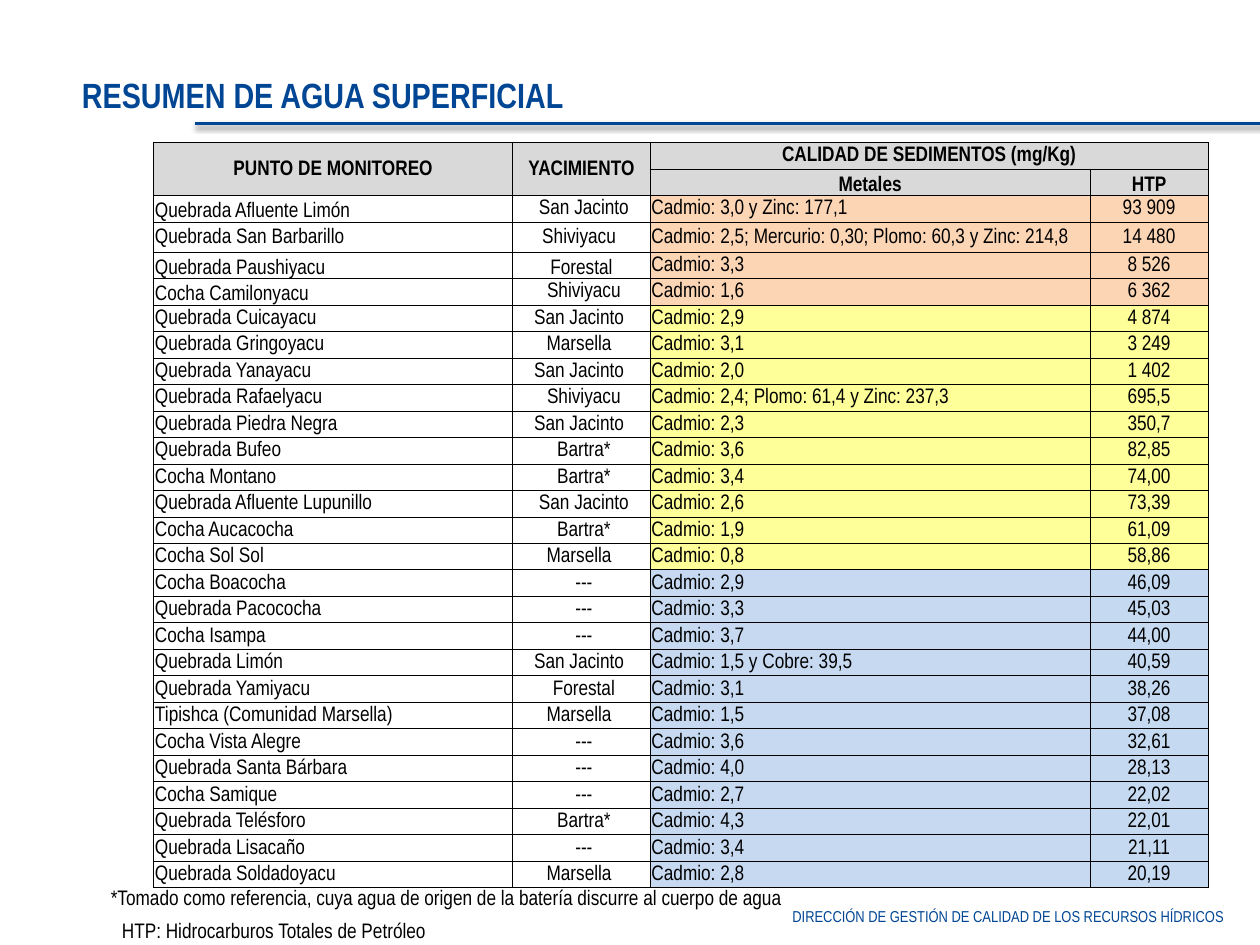
from dataclasses import dataclass

import pptx
import pptx.dml.color
import pptx.enum.shapes
import pptx.enum.text
import pptx.oxml
import pptx.oxml.ns
import pptx.util

Pt = pptx.util.Pt
ALIGN = pptx.enum.text.PP_ALIGN
ANCHOR = pptx.enum.text.MSO_ANCHOR
FIT = pptx.enum.text.MSO_AUTO_SIZE
NS = pptx.oxml.ns.nsdecls("a")


@dataclass(frozen=True)
class Theme:
    font: str = "Arial Narrow"
    blue: str = "004694"
    black: str = "000000"
    header: str = "D9D9D9"
    title_size: float = 20
    body_size: float = 12
    footer_size: float = 9


@dataclass(frozen=True)
class Label:
    text: str
    left: float
    top: float
    width: float
    height: float
    size: float
    color: str
    align: ALIGN = ALIGN.LEFT
    bold: bool = False
    wrap: bool = True


@dataclass(frozen=True)
class Sample:
    point: str
    field: str
    metals: str
    htp: str
    point_anchor: ANCHOR = ANCHOR.MIDDLE
    field_anchor: ANCHOR = ANCHOR.MIDDLE


@dataclass(frozen=True)
class Band:
    metals_fill: str
    htp_fill: str
    samples: tuple[Sample, ...]


T = Theme()

TITLE = Label("RESUMEN DE AGUA SUPERFICIAL", 39.6, 38.2, 621.4, 31.7,
              T.title_size, T.blue, bold=True)
LABELS = (
    Label("DIRECCIÓN DE GESTIÓN DE CALIDAD DE LOS RECURSOS HÍDRICOS",
          372.2, 514.8, 334.1, 18, T.footer_size, T.blue, ALIGN.RIGHT),
    Label("*Tomado como referencia, cuya agua de origen de la batería discurre al cuerpo de agua",
          56.2, 501.8, 402.5, 21.6, T.body_size, T.black, wrap=False),
    Label("HTP: Hidrocarburos Totales de Petróleo",
          62.6, 520.6, 342.7, 21.6, T.body_size, T.black),
)

BANDS = (
    Band("FCD5B5", "FCD5B4", (
        Sample("Quebrada Afluente Limón", " San Jacinto", "Cadmio: 3,0 y Zinc: 177,1", "93 909",
               ANCHOR.BOTTOM),
        Sample("Quebrada San Barbarillo", "Shiviyacu ",
               "Cadmio: 2,5; Mercurio: 0,30; Plomo: 60,3 y Zinc: 214,8", "14 480"),
        Sample("Quebrada Paushiyacu", "Forestal", "Cadmio: 3,3", "8 526",
               ANCHOR.BOTTOM, ANCHOR.BOTTOM),
        Sample("Cocha Camilonyacu", " Shiviyacu", "Cadmio: 1,6", "6 362", ANCHOR.BOTTOM),
    )),
    Band("FFFF99", "FFFF99", (
        Sample("Quebrada Cuicayacu", "San Jacinto ", "Cadmio: 2,9", "4 874"),
        Sample("Quebrada Gringoyacu", "Marsella ", "Cadmio: 3,1", "3 249"),
        Sample("Quebrada Yanayacu", "San Jacinto ", "Cadmio: 2,0", "1 402"),
        Sample("Quebrada Rafaelyacu", " Shiviyacu", "Cadmio: 2,4; Plomo: 61,4 y Zinc: 237,3", "695,5"),
        Sample("Quebrada Piedra Negra", "San Jacinto ", "Cadmio: 2,3", "350,7"),
        Sample("Quebrada Bufeo", " Bartra*", "Cadmio: 3,6", "82,85"),
        Sample("Cocha Montano", " Bartra*", "Cadmio: 3,4", "74,00"),
        Sample("Quebrada Afluente Lupunillo", " San Jacinto", "Cadmio: 2,6", "73,39"),
        Sample("Cocha Aucacocha", " Bartra*", "Cadmio: 1,9", "61,09"),
        Sample("Cocha Sol Sol", "Marsella ", "Cadmio: 0,8", "58,86"),
    )),
    Band("C6D9F1", "C5D9F1", (
        Sample("Cocha Boacocha", " ---", "Cadmio: 2,9", "46,09"),
        Sample("Quebrada Pacococha", " ---", "Cadmio: 3,3", "45,03"),
        Sample("Cocha Isampa", " ---", "Cadmio: 3,7", "44,00"),
        Sample("Quebrada Limón", "San Jacinto ", "Cadmio: 1,5 y Cobre: 39,5", "40,59"),
        Sample("Quebrada Yamiyacu", " Forestal", "Cadmio: 3,1", "38,26"),
        Sample("Tipishca (Comunidad Marsella)", "Marsella ", "Cadmio: 1,5", "37,08"),
        Sample("Cocha Vista Alegre", " ---", "Cadmio: 3,6", "32,61"),
        Sample("Quebrada Santa Bárbara", " ---", "Cadmio: 4,0", "28,13"),
        Sample("Cocha Samique", " ---", "Cadmio: 2,7", "22,02"),
        Sample("Quebrada Telésforo", " Bartra*", "Cadmio: 4,3", "22,01"),
        Sample("Quebrada Lisacaño", " ---", "Cadmio: 3,4", "21,11"),
        Sample("Quebrada Soldadoyacu", "Marsella ", "Cadmio: 2,8", "20,19"),
    )),
)

COLUMNS = (205.2, 78.6, 251.3, 67.5)
ROW_HEIGHT, TALL_ROW, TALL_HEIGHT = 14.96, 3, 17.2


def rgb(color: str):
    return pptx.dml.color.RGBColor.from_string(color)


def write(tf, text: str, size: float, color: str, align: ALIGN, bold: bool) -> None:
    p = tf.paragraphs[0]
    p.alignment = align
    r = p.add_run()
    r.text = text
    for name, value in {"name": T.font, "size": Pt(size), "bold": bold}.items():
        setattr(r.font, name, value)
    r.font.color.rgb = rgb(color)


def fill_label(sp, label: Label) -> None:
    for name in ("left", "top", "width", "height"):
        setattr(sp, name, Pt(getattr(label, name)))
    tf = sp.text_frame
    settings = {"word_wrap": label.wrap, "auto_size": FIT.SHAPE_TO_FIT_TEXT,
                "vertical_anchor": ANCHOR.TOP}
    for name, value in settings.items():
        setattr(tf, name, value)
    write(tf, label.text, label.size, label.color, label.align, label.bold)


def draw_rule(s) -> None:
    line = s.shapes.add_connector(pptx.enum.shapes.MSO_CONNECTOR.STRAIGHT,
                                  Pt(111.6), Pt(70.6), Pt(728.6), Pt(70.6))
    line.line.color.rgb = rgb(T.blue)
    line.line.width = Pt(2)
    line._element.spPr.append(pptx.oxml.parse_xml(
        f'<a:effectLst {NS}><a:outerShdw blurRad="{Pt(3.1)}" dist="{Pt(1.6)}" dir="5400000" '
        f'rotWithShape="0"><a:srgbClr val="{T.black}"><a:alpha val="38000"/></a:srgbClr>'
        '</a:outerShdw></a:effectLst>'))


def add_borders(cell) -> None:
    tc_pr = cell._tc.get_or_add_tcPr()
    for side in "LRTB":
        tc_pr.append(pptx.oxml.parse_xml(
            f'<a:ln{side} {NS} w="{Pt(0.5)}"><a:solidFill><a:srgbClr val="{T.black}"/>'
            f'</a:solidFill></a:ln{side}>'))


def fill_cell(cell, text: str, fill: str | None = None, align: ALIGN = ALIGN.CENTER,
              anchor: ANCHOR = ANCHOR.MIDDLE, bold: bool = False) -> None:
    if fill:
        cell.fill.solid()
        cell.fill.fore_color.rgb = rgb(fill)
    settings = {"margin_left": Pt(0.72), "margin_right": Pt(0.72), "margin_top": Pt(0.72),
                "margin_bottom": 0, "vertical_anchor": anchor}
    for name, value in settings.items():
        setattr(cell, name, value)
    write(cell.text_frame, text, T.body_size, T.black, align, bold)


def draw_table(s) -> None:
    count = 2 + sum(len(band.samples) for band in BANDS)
    heights = [TALL_HEIGHT if i == TALL_ROW else ROW_HEIGHT for i in range(count)]
    table = s.shapes.add_table(count, len(COLUMNS), Pt(87.8), Pt(81.4),
                               Pt(sum(COLUMNS)), Pt(sum(heights))).table
    table.first_row = table.horz_banding = False
    for column, width in zip(table.columns, COLUMNS):
        column.width = Pt(width)
    for row, height in zip(table.rows, heights):
        row.height = Pt(height)
    for cell in table.iter_cells():
        add_borders(cell)
        cell.fill.background()
    for start, end in (((0, 0), (1, 0)), ((0, 1), (1, 1)), ((0, 2), (0, 3))):
        table.cell(*start).merge(table.cell(*end))
    for col, text in enumerate(("PUNTO DE MONITOREO", "YACIMIENTO", "CALIDAD DE SEDIMENTOS (mg/Kg)")):
        fill_cell(table.cell(0, col), text, T.header, bold=True)
    for col, text in enumerate(("Metales", "HTP"), 2):
        fill_cell(table.cell(1, col), text, T.header, anchor=ANCHOR.BOTTOM, bold=True)
    entries = ((band, sample) for band in BANDS for sample in band.samples)
    for row, (band, sample) in enumerate(entries, 2):
        fill_cell(table.cell(row, 0), sample.point, align=ALIGN.LEFT, anchor=sample.point_anchor)
        fill_cell(table.cell(row, 1), sample.field, anchor=sample.field_anchor)
        fill_cell(table.cell(row, 2), sample.metals, band.metals_fill, ALIGN.LEFT)
        fill_cell(table.cell(row, 3), sample.htp, band.htp_fill)


def main() -> None:
    prs = pptx.Presentation()
    prs.slide_width, prs.slide_height = Pt(720), Pt(540)
    s = prs.slides.add_slide(prs.slide_layouts[5])
    fill_label(s.shapes.title, TITLE)
    draw_rule(s)
    draw_table(s)
    for label in LABELS:
        fill_label(s.shapes.add_textbox(0, 0, 0, 0), label)
    prs.save("out.pptx")


if __name__ == "__main__":
    main()
